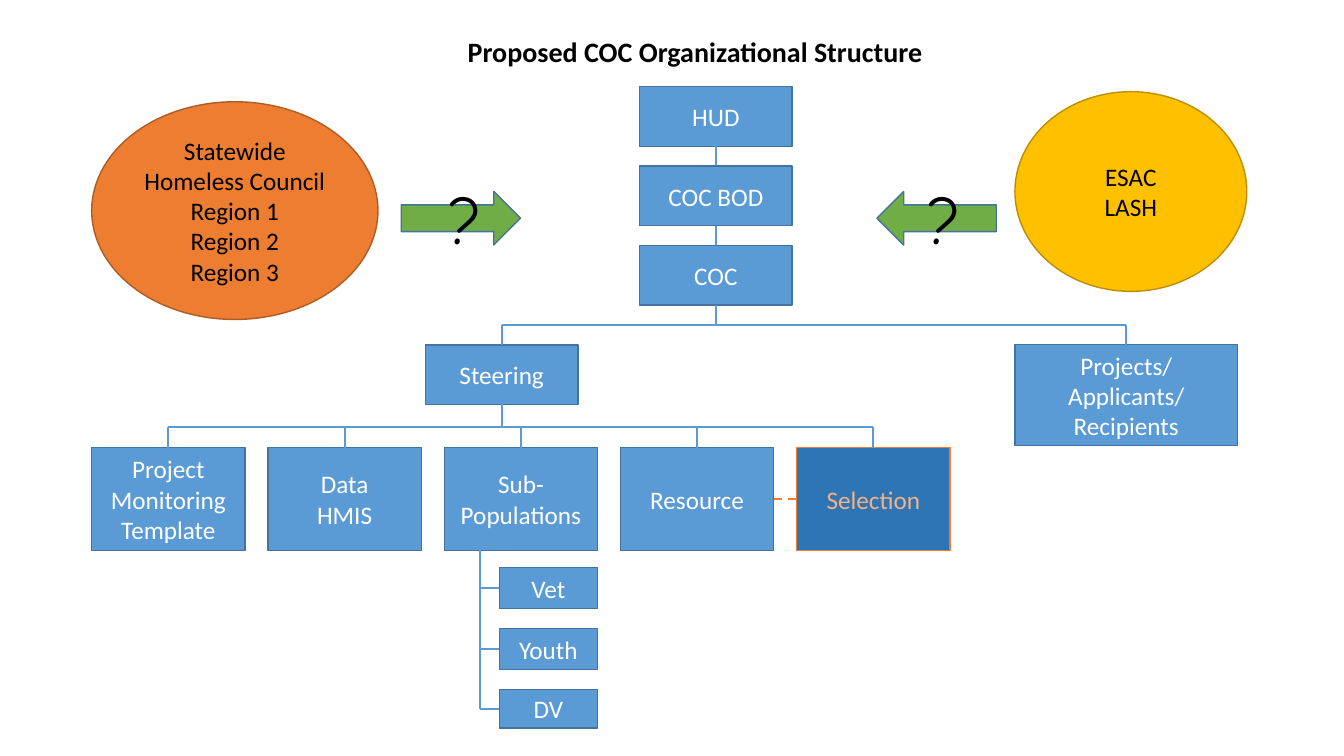
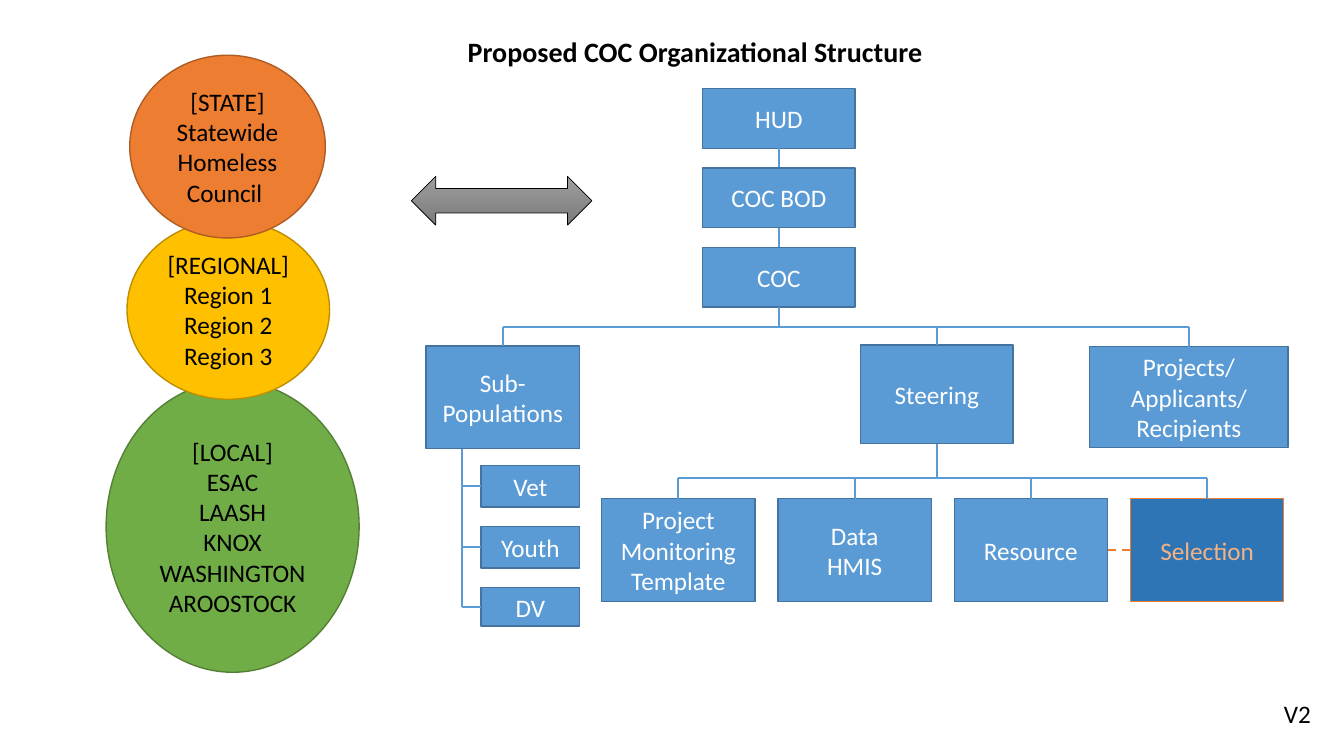
"""Build two slides that chart a proposed COC organizational structure."""
from dataclasses import dataclass

from lxml.etree import SubElement
from pptx import Presentation
from pptx.dml.color import RGBColor
from pptx.enum.dml import MSO_LINE
from pptx.enum.shapes import MSO_CONNECTOR, MSO_SHAPE
from pptx.enum.text import MSO_ANCHOR, MSO_AUTO_SIZE, PP_ALIGN
from pptx.oxml.ns import qn
from pptx.shapes.autoshape import Shape
from pptx.slide import Slide
from pptx.util import Pt

COLORS = {
    "blue": "5B9BD5", "blue edge": "43739E", "deep blue": "2E75B6",
    "orange": "ED7D31", "orange edge": "AF5C24", "peach": "F4B183",
    "gold": "FFC000", "gold edge": "BD8E00",
    "green": "70AD47", "green edge": "538035",
    "light gray": "9D9D9D", "dark gray": "7C7C7C",
    "white": "FFFFFF", "black": "000000",
}
BODY_FONT = "Calibri"
MARK_FONT = "Comic Neue"
CHAIN_PITCH = 56.7
LEVEL_WIDTH, LEVEL_HEIGHT = 108.8, 42.5
COMMITTEE_WIDTH, COMMITTEE_HEIGHT = 109.5, 73.4
COMMITTEE_PITCH = 125.9
MONITORING = "Project\nMonitoring\nTemplate"
DATA = "Data\nHMIS"
SUBPOPULATIONS = "Sub-Populations"
PROJECTS = "Projects/ Applicants/ Recipients"


@dataclass(frozen=True)
class Style:
    """Outline and colours of a kind of node."""

    fill: str
    edge: str
    ink: str = "black"
    geometry: MSO_SHAPE = MSO_SHAPE.OVAL
    edge_width: float = 1


UNIT = Style("blue", "blue edge", "white", MSO_SHAPE.RECTANGLE)
SELECTION = Style("deep blue", "orange", "peach", MSO_SHAPE.RECTANGLE)
ORANGE_GROUP = Style("orange", "orange edge")
GOLD_GROUP = Style("gold", "gold edge")
GREEN_GROUP = Style("green", "green edge")
OPEN_LINK = Style("green", "blue edge", geometry=MSO_SHAPE.RIGHT_ARROW)
MUTUAL_LINK = Style("light gray", "black", geometry=MSO_SHAPE.LEFT_RIGHT_ARROW, edge_width=0.5)


@dataclass(frozen=True)
class Node:
    """A placed and labelled part of the chart, in points."""

    label: str
    left: float
    top: float
    width: float
    height: float
    style: Style = UNIT

    @property
    def right(self) -> float:
        """Give the right edge."""
        return self.left + self.width

    @property
    def bottom(self) -> float:
        """Give the bottom edge."""
        return self.top + self.height

    @property
    def center(self) -> float:
        """Give the horizontal middle."""
        return self.left + self.width / 2

    @property
    def middle(self) -> float:
        """Give the vertical middle."""
        return self.top + self.height / 2


def rgb(color: str) -> RGBColor:
    """Look up a named colour."""
    return RGBColor.from_string(COLORS[color])


def draw_node(slide: Slide, node: Node) -> Shape:
    """Draw a node with its centred label."""
    style = node.style
    shape = slide.shapes.add_shape(
        style.geometry, Pt(node.left), Pt(node.top), Pt(node.width), Pt(node.height))
    shape.shadow.inherit = False
    shape.fill.solid()
    shape.fill.fore_color.rgb = rgb(style.fill)
    shape.line.color.rgb = rgb(style.edge)
    shape.line.width = Pt(style.edge_width)
    if node.label:
        frame = shape.text_frame
        frame.word_wrap = True
        frame.vertical_anchor = MSO_ANCHOR.MIDDLE
        frame.text = node.label
        for paragraph in frame.paragraphs:
            paragraph.alignment = PP_ALIGN.CENTER
            paragraph.font.size = Pt(18)
            paragraph.font.name = BODY_FONT
            paragraph.font.color.rgb = rgb(style.ink)
    return shape


def draw_line(slide: Slide, x1: float, y1: float, x2: float, y2: float,
              color: str = "blue", dashed: bool = False) -> None:
    """Draw a straight link between two points."""
    link = slide.shapes.add_connector(MSO_CONNECTOR.STRAIGHT, Pt(x1), Pt(y1), Pt(x2), Pt(y2))
    link.line.color.rgb = rgb(color)
    link.line.width = Pt(1.5)
    if dashed:
        link.line.dash_style = MSO_LINE.DASH
    SubElement(link._element.spPr, qn("a:effectLst"))


def draw_text(slide: Slide, text: str, left: float, top: float, width: float, height: float,
              size: float, font: str = BODY_FONT, bold: bool = False, wrap: bool = False) -> None:
    """Draw free-standing black text."""
    frame = slide.shapes.add_textbox(Pt(left), Pt(top), Pt(width), Pt(height)).text_frame
    frame.word_wrap = wrap
    frame.auto_size = MSO_AUTO_SIZE.SHAPE_TO_FIT_TEXT
    frame.text = text
    paragraph = frame.paragraphs[0]
    paragraph.font.size = Pt(size)
    paragraph.font.name = font
    paragraph.font.bold = bold
    paragraph.font.color.rgb = rgb("black")


def draw_chain(slide: Slide, left: float, top: float) -> float:
    """Draw the three top levels and return the height where the branches start."""
    for level, label in enumerate(("HUD", "COC BOD", "COC")):
        node = Node(label, left, top + level * CHAIN_PITCH, LEVEL_WIDTH, LEVEL_HEIGHT)
        draw_node(slide, node)
        draw_line(slide, node.center, node.bottom, node.center, node.top + CHAIN_PITCH)
    return top + 3 * CHAIN_PITCH


def draw_branches(slide: Slide, y: float, nodes: list[Node]) -> None:
    """Draw nodes hanging from a common horizontal line."""
    draw_line(slide, nodes[0].center, y, nodes[-1].center, y)
    for node in nodes:
        draw_node(slide, node)
        draw_line(slide, node.center, y, node.center, node.top)


def draw_committees(slide: Slide, steering: Node, left: float, top: float, bus: float,
                    labels: tuple[str, ...]) -> list[Node]:
    """Draw the committees below steering, with selection tied to the one before it."""
    committees = [
        Node(label, left + i * COMMITTEE_PITCH, top, COMMITTEE_WIDTH, COMMITTEE_HEIGHT,
             SELECTION if label == "Selection" else UNIT)
        for i, label in enumerate(labels)
    ]
    draw_line(slide, steering.center, steering.bottom, steering.center, bus)
    draw_branches(slide, bus, committees)
    resource, selection = committees[-2:]
    draw_line(slide, resource.right, resource.middle, selection.left, selection.middle,
              "orange", dashed=True)
    return committees


def draw_subpopulations(slide: Slide, parent: Node) -> None:
    """Draw the subpopulations stepped below their parent."""
    spine = parent.left + 25.8
    indent = 39.3
    for i, (label, height) in enumerate((("Vet", 29.5), ("Youth", 29.5), ("DV", 27.5))):
        group = Node(label, parent.left + indent, parent.top + 85.6 + i * 43.6,
                     parent.width - indent, height)
        draw_node(slide, group)
        draw_line(slide, group.left, group.middle, spine, group.middle)
    draw_line(slide, spine, parent.bottom, spine, group.middle)


def add_chart_slide(deck: Presentation) -> Slide:
    """Add a blank slide with the shared title."""
    slide = deck.slides.add_slide(deck.slide_layouts[6])
    draw_text(slide, "Proposed COC Organizational Structure", 327, 21, 342, 31.5, 20, bold=True)
    return slide


def build_first_proposal(deck: Presentation) -> None:
    """Build the version with open questions about the outside groups."""
    slide = add_chart_slide(deck)
    bus = draw_chain(slide, 457, 62)
    steering = Node("Steering", 304, 246.3, LEVEL_WIDTH, LEVEL_HEIGHT)
    projects = Node(PROJECTS, 725, 246.3, 159, 72)
    draw_branches(slide, bus, [steering, projects])
    committees = draw_committees(
        slide, steering, 65.5, 319.7, 305.3,
        (MONITORING, DATA, SUBPOPULATIONS, "Resource", "Selection"))
    draw_subpopulations(slide, committees[2])
    draw_node(slide, Node("Statewide Homeless Council \nRegion 1\nRegion 2\nRegion 3",
                          65.5, 72.7, 204.5, 155.5, ORANGE_GROUP))
    draw_node(slide, Node("ESAC\nLASH", 725, 65.5, 165.6, 142.6, GOLD_GROUP))
    for arrow_left, mark_left, rotation in ((286.6, 313.2, 0), (626.4, 655.2, 180)):
        arrow = draw_node(slide, Node("", arrow_left, 136.8, 85.2, 38.2, OPEN_LINK))
        arrow.rotation = rotation
        draw_text(slide, "?", mark_left, 123.1, 41.8, 65.5, 48, MARK_FONT, wrap=True)


def build_second_proposal(deck: Presentation) -> None:
    """Build the version with state, regional and local groups."""
    slide = add_chart_slide(deck)
    bus = draw_chain(slide, 502, 63.4)
    subpopulations = Node(SUBPOPULATIONS, 304.4, 247, COMMITTEE_WIDTH, COMMITTEE_HEIGHT)
    steering = Node("Steering", 614.8, 246.3, LEVEL_WIDTH, 70.6)
    projects = Node(PROJECTS, 778.4, 247.7, 141.8, 72)
    draw_branches(slide, bus, [subpopulations, steering, projects])
    draw_subpopulations(slide, subpopulations)
    draw_committees(slide, steering, 429.8, 356.2, 341.4,
                    (MONITORING, DATA, "Resource", "Selection"))
    for group in (
        Node("[LOCAL]\nESAC\nLAASH\nKNOX\nWASHINGTON\nAROOSTOCK",
             75.8, 272.2, 180.7, 208, GREEN_GROUP),
        Node("[REGIONAL]\vRegion 1\nRegion 2\nRegion 3", 90.7, 157.2, 144.7, 128, GOLD_GROUP),
        Node("[STATE]\nStatewide Homeless Council ", 92.7, 39.5, 139.7, 130.5, ORANGE_GROUP),
    ):
        draw_node(slide, group)
    arrow = draw_node(slide, Node("", 293.8, 126, 129, 34.8, MUTUAL_LINK))
    arrow.fill.gradient()
    arrow.fill.gradient_angle = 270
    for stop, color in zip(arrow.fill.gradient_stops, ("light gray", "dark gray")):
        stop.color.rgb = rgb(color)
    draw_text(slide, "V2", 910, 495.4, 33.8, 29, 18)


def main() -> None:
    """Build and save the deck."""
    deck = Presentation()
    deck.slide_width, deck.slide_height = Pt(960), Pt(540)
    build_first_proposal(deck)
    build_second_proposal(deck)
    deck.save("out.pptx")


if __name__ == "__main__":
    main()
